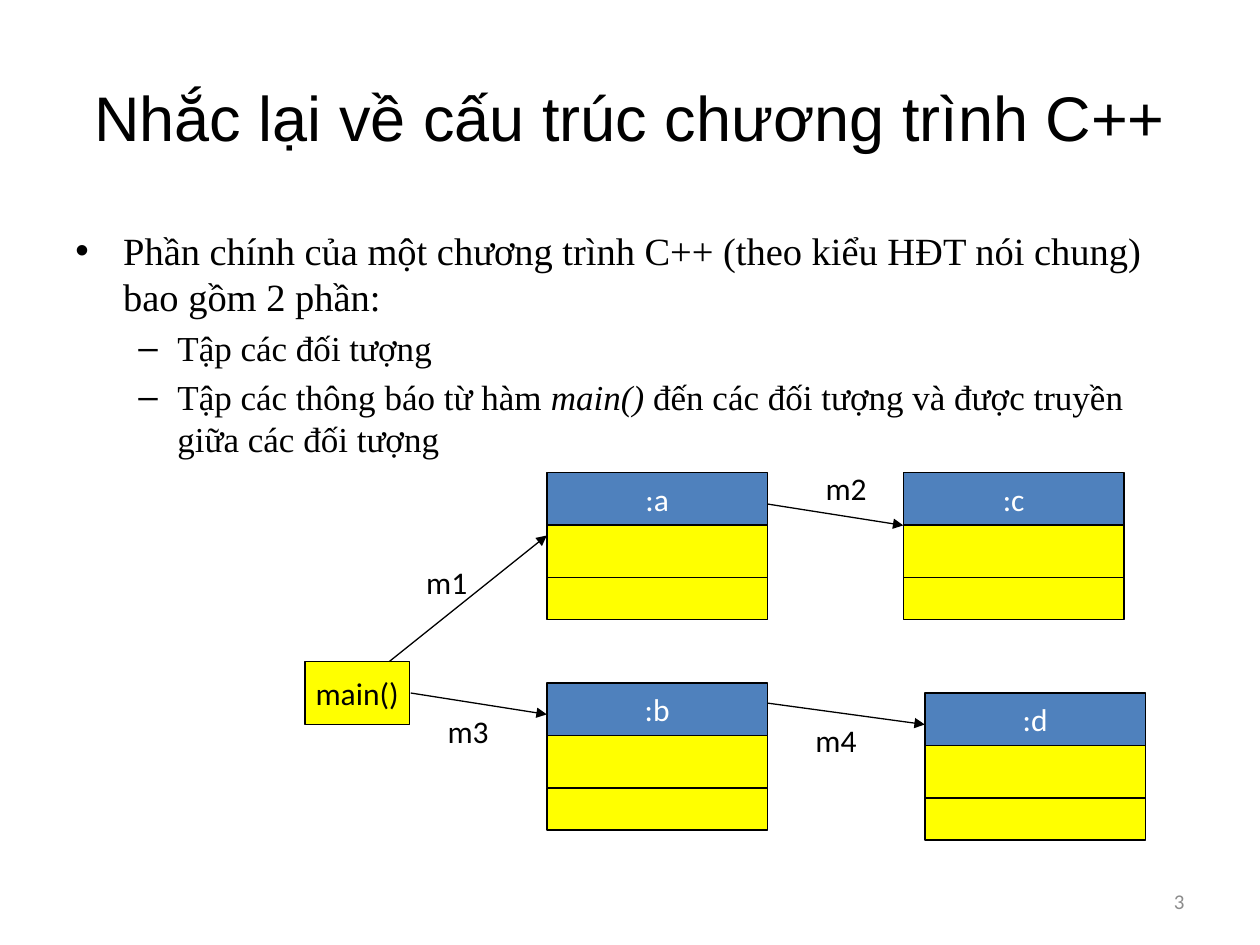
from dataclasses import dataclass

from lxml.etree import SubElement
from pptx import Presentation
from pptx.dml.color import RGBColor
from pptx.enum.shapes import MSO_CONNECTOR, MSO_SHAPE
from pptx.enum.text import MSO_ANCHOR, PP_ALIGN
from pptx.oxml.ns import qn
from pptx.util import Inches, Pt


@dataclass(frozen=True)
class Theme:
    black: str = "000000"
    white: str = "FFFFFF"
    blue: str = "4F81BD"
    yellow: str = "FFFF00"
    gray: str = "8C8C8C"
    head: str = "Arial"
    serif: str = "Times New Roman"
    sans: str = "Calibri"
    title: float = 36
    main: float = 22
    sub: float = 20
    label: float = 18
    foot: float = 12
    line: float = 0.75


@dataclass(frozen=True)
class Box:
    left: float
    top: float
    width: float
    height: float

    def inches(self) -> tuple:
        return tuple(map(Inches, (self.left, self.top, self.width, self.height)))


@dataclass(frozen=True)
class Font:
    name: str
    size: float
    color: str = "000000"


@dataclass(frozen=True)
class Item:
    """A bullet; its runs are pairs of text and italic flag."""
    runs: tuple
    size: float
    mark: str
    left: float
    hang: float
    level: int = 0


@dataclass(frozen=True)
class Node:
    name: str
    left: float
    top: float


@dataclass(frozen=True)
class Call:
    """A message: its arrow and the corner of its label."""
    name: str
    start: tuple
    end: tuple
    label: tuple


THEME = Theme()
LABEL = Font(THEME.sans, THEME.label)
WIDTH = 1.75
ROWS = ((THEME.blue, 5 / 12), (THEME.yellow, 5 / 12), (THEME.yellow, 1 / 3))

ITEMS = (
    Item((("Phần chính của một chương trình C++ (theo kiểu HĐT nói chung) "
           "bao gồm 2 phần:", False),), THEME.main, "•", 0.38, 0.38),
    Item((("Tập các đối tượng", False),), THEME.sub, "–", 0.81, 0.31, 1),
    Item((("Tập các thông báo từ hàm ", False), ("main()", True),
          (" đến các đối tượng và được truyền giữa các đối tượng", False)),
         THEME.sub, "–", 0.81, 0.31, 1),
)
NODES = (Node(":a", 4.34, 3.75), Node(":b", 4.34, 5.42),
         Node(":c", 7.17, 3.75), Node(":d", 7.34, 5.5))
CALLS = (
    Call("m1", (3.09, 5.25), (4.34, 4.25), (3.17, 4.42)),
    Call("m2", (6.09, 4), (7.17, 4.17), (6.34, 3.67)),
    Call("m3", (3.26, 5.5), (4.34, 5.67), (3.34, 5.6)),
    Call("m4", (6.09, 5.58), (7.34, 5.75), (6.26, 5.67)),
)


def add_run(para, text: str, font: Font, italic: bool = False) -> None:
    run = para.add_run()
    run.text = text
    run.font.name = font.name
    run.font.size = Pt(font.size)
    run.font.italic = italic
    run.font.color.rgb = RGBColor.from_string(font.color)


def add_text(slide, box: Box, text: str, font: Font,
             align=PP_ALIGN.CENTER, anchor=MSO_ANCHOR.TOP) -> None:
    frame = slide.shapes.add_textbox(*box.inches()).text_frame
    frame.word_wrap = True
    frame.vertical_anchor = anchor
    para = frame.paragraphs[0]
    para.alignment = align
    add_run(para, text, font)


def add_list(slide, box: Box, items: tuple) -> None:
    frame = slide.shapes.add_textbox(*box.inches()).text_frame
    frame.word_wrap = True
    for i, item in enumerate(items):
        para = frame.add_paragraph() if i else frame.paragraphs[0]
        para.level = item.level
        para.space_before = Pt(0.2 * item.size if i else 0)
        props = para._p.get_or_add_pPr()
        props.set("marL", str(Inches(item.left)))
        props.set("indent", str(-Inches(item.hang)))
        SubElement(props, qn("a:buFont"), typeface=THEME.head)
        SubElement(props, qn("a:buChar"), char=item.mark)
        for text, italic in item.runs:
            add_run(para, text, Font(THEME.serif, item.size), italic)


def add_rect(shapes, box: Box, fill: str, text: str = "",
             color: str = THEME.black) -> None:
    rect = shapes.add_shape(MSO_SHAPE.RECTANGLE, *box.inches())
    rect.shadow.inherit = False
    rect.fill.solid()
    rect.fill.fore_color.rgb = RGBColor.from_string(fill)
    rect.line.color.rgb = RGBColor.from_string(THEME.black)
    rect.line.width = Pt(THEME.line)
    if text:
        frame = rect.text_frame
        frame.word_wrap = False
        frame.vertical_anchor = MSO_ANCHOR.MIDDLE
        para = frame.paragraphs[0]
        para.alignment = PP_ALIGN.CENTER
        add_run(para, text, Font(THEME.sans, THEME.label, color))


def add_node(slide, node: Node) -> None:
    group = slide.shapes.add_group_shape()
    top = node.top
    for i, (fill, height) in enumerate(ROWS):
        add_rect(group.shapes, Box(node.left, top, WIDTH, height), fill,
                 "" if i else node.name, THEME.white)
        top += height


def add_arrow(slide, call: Call) -> None:
    ends = map(Inches, call.start + call.end)
    arrow = slide.shapes.add_connector(MSO_CONNECTOR.STRAIGHT, *ends)
    arrow.line.color.rgb = RGBColor.from_string(THEME.black)
    arrow.line.width = Pt(THEME.line)
    SubElement(arrow.line._get_or_add_ln(), qn("a:tailEnd"), type="triangle")
    SubElement(arrow._element.spPr, qn("a:effectLst"))


def main() -> None:
    deck = Presentation()
    deck.slide_width, deck.slide_height = Inches(10), Inches(7.5)
    slide = deck.slides.add_slide(deck.slide_layouts[6])

    add_text(slide, Box(0.5, 0.3, 9, 1.25),
             "Nhắc lại về cấu trúc chương trình C++",
             Font(THEME.head, THEME.title), anchor=MSO_ANCHOR.MIDDLE)
    add_list(slide, Box(0.5, 1.75, 9, 4.95), ITEMS)
    add_rect(slide.shapes, Box(2.42, 5.25, 0.83, 0.5), THEME.yellow, "main()")
    for node in NODES:
        add_node(slide, node)
    for call in CALLS:
        add_arrow(slide, call)
    for call in CALLS:
        add_text(slide, Box(*call.label, 0.75, 0.4), call.name, LABEL)
    add_text(slide, Box(7.17, 6.95, 2.33, 0.4), "3",
             Font(THEME.sans, THEME.foot, THEME.gray),
             PP_ALIGN.RIGHT, MSO_ANCHOR.MIDDLE)

    deck.save("out.pptx")


if __name__ == "__main__":
    main()
